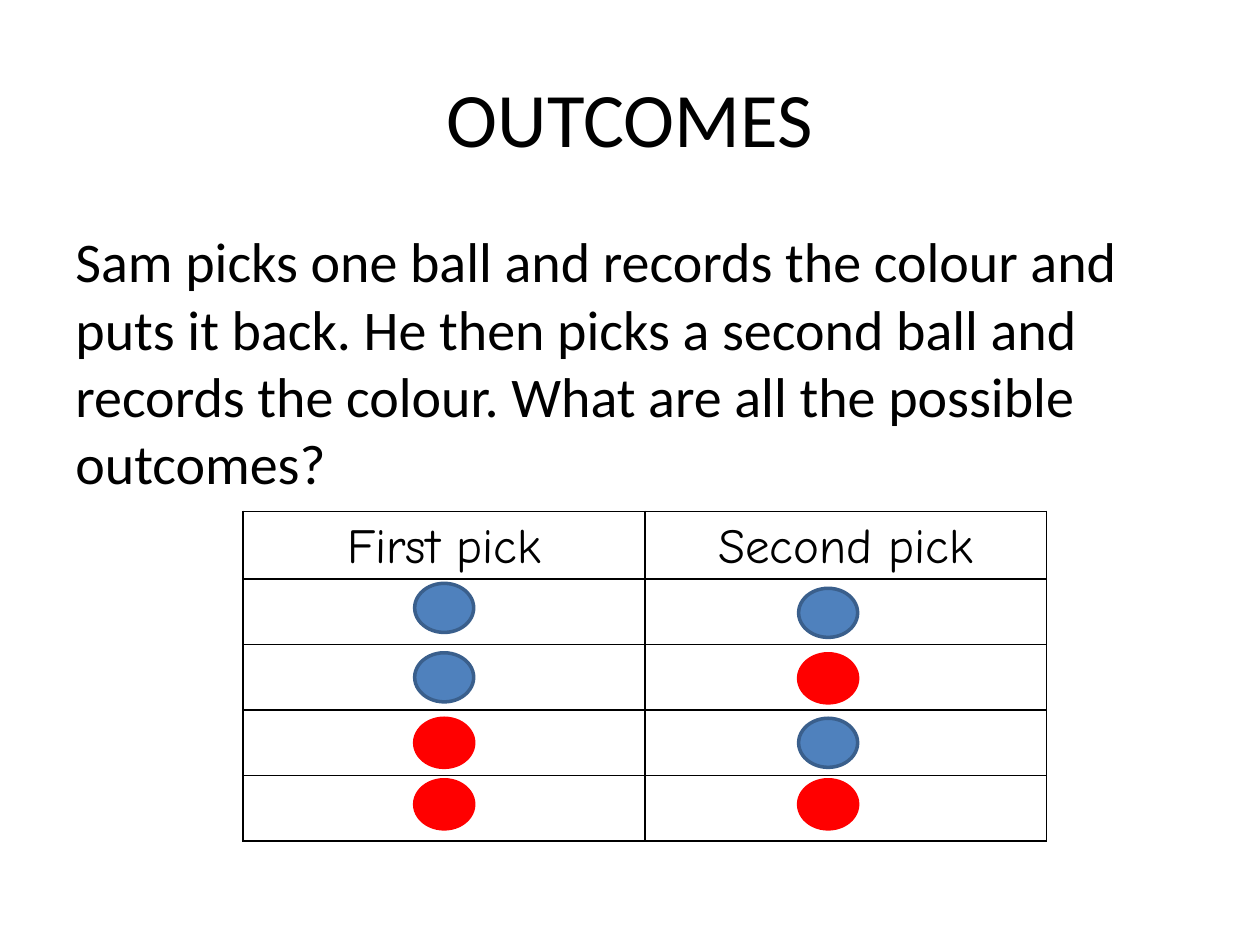
from dataclasses import dataclass

from lxml.etree import SubElement
from pptx import Presentation
from pptx.dml.color import RGBColor
from pptx.enum.shapes import MSO_SHAPE
from pptx.enum.text import MSO_ANCHOR, PP_ALIGN
from pptx.oxml.ns import qn
from pptx.util import Cm, Pt


@dataclass(frozen=True)
class Theme:
    ink: str = "000000"
    blue: str = "4F81BD"
    blue_edge: str = "3A5F8C"
    red: str = "FF0000"
    font: str = "Calibri"
    table_font: str = "Comic Neue"
    title_size: int = 44
    body_size: int = 32
    table_size: int = 28
    border_width: int = 1
    ball_line: int = 2


def write_text(frame, text, *, size, font, color, align=PP_ALIGN.LEFT, spacing=None):
    paragraph = frame.paragraphs[0]
    paragraph.alignment = align
    paragraph.line_spacing = spacing
    run = paragraph.add_run()
    run.text = text
    run.font.size = Pt(size)
    run.font.name = font
    run.font.color.rgb = RGBColor.from_string(color)


class SlideBuilder:
    def __init__(self, slide, theme):
        self.slide = slide
        self.theme = theme

    def text(self, text, left, top, width, height, size,
             align=PP_ALIGN.LEFT, anchor=MSO_ANCHOR.TOP):
        shape = self.slide.shapes.add_textbox(Cm(left), Cm(top), Cm(width), Cm(height))
        frame = shape.text_frame
        frame.word_wrap = True
        frame.vertical_anchor = anchor
        write_text(frame, text, size=size, font=self.theme.font,
                   color=self.theme.ink, align=align)

    def border(self, cell):
        properties = cell._tc.get_or_add_tcPr()
        for side in ("a:lnL", "a:lnR", "a:lnT", "a:lnB"):
            line = SubElement(properties, qn(side), w=str(Pt(self.theme.border_width)))
            fill = SubElement(line, qn("a:solidFill"))
            SubElement(fill, qn("a:srgbClr"), val=self.theme.ink)

    def table(self, headers, row_count, left, top, column_width, row_height):
        frame = self.slide.shapes.add_table(
            row_count, len(headers), Cm(left), Cm(top),
            Cm(column_width * len(headers)), Cm(row_height * row_count))
        table = frame.table
        table.first_row = False
        table.horz_banding = False
        for row in table.rows:
            row.height = Cm(row_height)
        for cell in table.iter_cells():
            cell.margin_left = cell.margin_right = Cm(0.18)
            cell.margin_top = cell.margin_bottom = 0
            self.border(cell)
            cell.fill.background()
        for column, header in enumerate(headers):
            write_text(table.cell(0, column).text_frame, header,
                       size=self.theme.table_size, font=self.theme.table_font,
                       color=self.theme.ink, align=PP_ALIGN.CENTER, spacing=1.15)

    def ball(self, left, top, fill, edge):
        shape = self.slide.shapes.add_shape(
            MSO_SHAPE.OVAL, Cm(left), Cm(top), Cm(1.19), Cm(0.99))
        shape.shadow.inherit = False
        shape.fill.solid()
        shape.fill.fore_color.rgb = RGBColor.from_string(fill)
        shape.line.color.rgb = RGBColor.from_string(edge)
        shape.line.width = Pt(self.theme.ball_line)


def main():
    presentation = Presentation()
    presentation.slide_width = Cm(25.4)
    presentation.slide_height = Cm(19.05)
    slide = presentation.slides.add_slide(presentation.slide_layouts[6])
    theme = Theme()
    builder = SlideBuilder(slide, theme)

    builder.text("OUTCOMES", 1.27, 0.76, 22.86, 3.18, theme.title_size,
                 align=PP_ALIGN.CENTER, anchor=MSO_ANCHOR.MIDDLE)
    builder.text(
        "Sam picks one ball and records the colour and puts it back. "
        "He then picks a second ball and records the colour. "
        "What are all the possible outcomes?",
        1.27, 4.45, 22.86, 12.57, theme.body_size)
    builder.table(["First pick", "Second pick"], 5, 4.9, 10.31, 8.1, 1.32)

    blue = (theme.blue, theme.blue_edge)
    red = (theme.red, theme.red)
    picks = [
        (8.36, [(11.76, blue), (13.16, blue), (14.48, red), (15.72, red)]),
        (16.1, [(11.86, blue), (13.18, red), (14.48, blue), (15.72, red)]),
    ]
    for left, balls in picks:
        for top, colors in balls:
            builder.ball(left, top, *colors)

    presentation.save("out.pptx")


if __name__ == "__main__":
    main()
